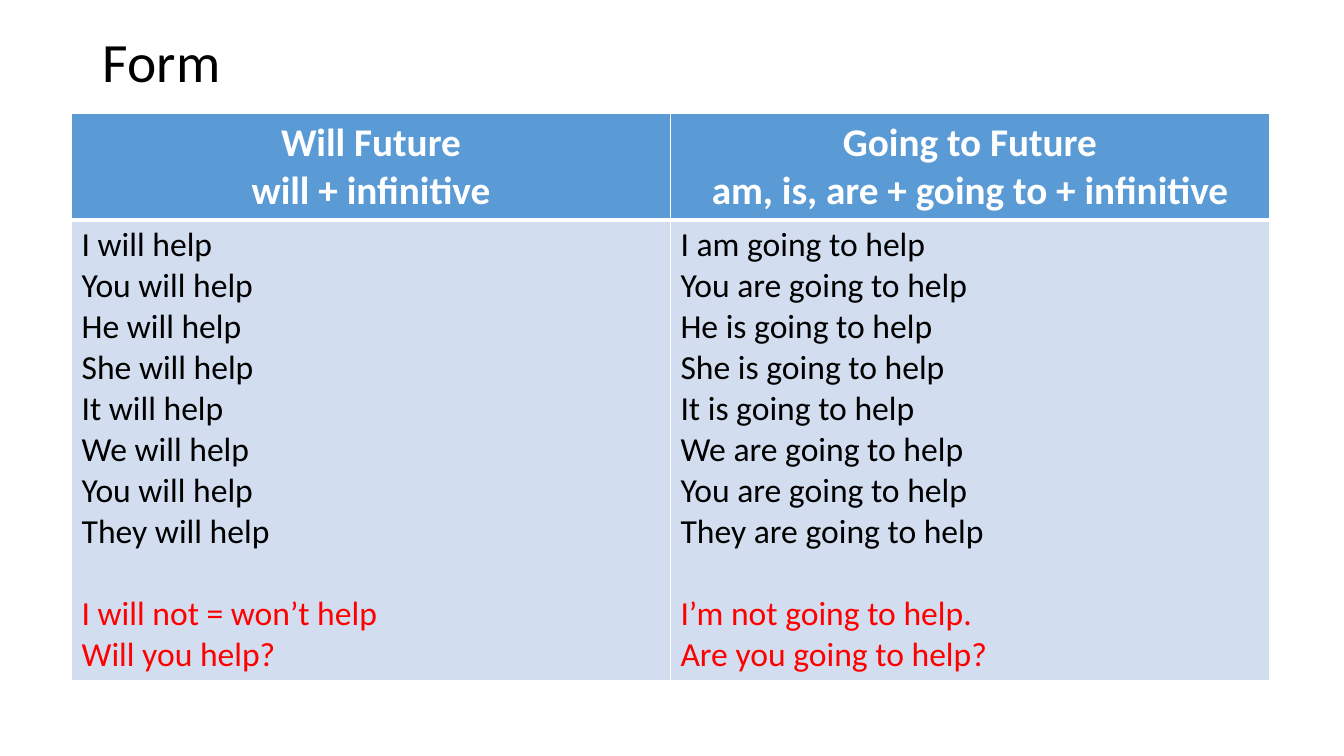
import dataclasses

import pptx
import pptx.dml.color
import pptx.enum.text
import pptx.oxml.ns
import pptx.util
from lxml import etree

Inches = pptx.util.Inches
Pt = pptx.util.Pt
Align = pptx.enum.text.PP_ALIGN
Anchor = pptx.enum.text.MSO_ANCHOR


@dataclasses.dataclass(frozen=True)
class Theme:
    font: str = "Calibri"
    black: str = "000000"
    white: str = "FFFFFF"
    red: str = "FF0000"
    header_fill: str = "5B9BD5"
    body_fill: str = "D2DEEF"
    title_size: float = 39.6
    header_size: float = 28
    body_size: float = 24
    example_gap: float = 29.3
    thin_line: float = 1
    thick_line: float = 3


THEME = Theme()

HEADERS = [
    ["Will Future", "will + infinitive"],
    ["Going to Future", "am, is, are + going to + infinitive"],
]
WILL_FORMS = [f"{person} will help" for person in
              ("I", "You", "He", "She", "It", "We", "You", "They")]
GOING_TO_FORMS = [f"{subject} going to help" for subject in
                  ("I am", "You are", "He is", "She is", "It is",
                   "We are", "You are", "They are")]
FORMS = [WILL_FORMS, GOING_TO_FORMS]
EXAMPLES = [
    ["I will not = won’t help", "Will you help?"],
    ["I’m not going to help.", "Are you going to help?"],
]


def add_text(text_frame, text, *, size, color, bold=False, align=Align.LEFT,
             space_before=0, line_spacing=1.0):
    """Fill the empty first paragraph, or append a new one."""
    paragraph = text_frame.paragraphs[-1]
    if paragraph.runs:
        paragraph = text_frame.add_paragraph()
    paragraph.alignment = align
    paragraph.space_before = Pt(space_before)
    paragraph.line_spacing = line_spacing
    run = paragraph.add_run()
    run.text = text
    run.font.name = THEME.font
    run.font.size = Pt(size)
    run.font.bold = bold
    run.font.color.rgb = pptx.dml.color.RGBColor.from_string(color)


def style_cell(cell, fill, **line_widths):
    """Draw white borders, then fill the cell."""
    properties = cell._tc.get_or_add_tcPr()
    for side in ("L", "R", "T", "B"):
        width = line_widths.get(side, THEME.thin_line)
        line = etree.SubElement(properties, pptx.oxml.ns.qn(f"a:ln{side}"),
                                w=str(Pt(width)))
        solid = etree.SubElement(line, pptx.oxml.ns.qn("a:solidFill"))
        etree.SubElement(solid, pptx.oxml.ns.qn("a:srgbClr"), val=THEME.white)
    cell.fill.solid()
    cell.fill.fore_color.rgb = pptx.dml.color.RGBColor.from_string(fill)


def place_title(slide, text, left, top, width, height):
    title = slide.shapes.title
    title.left, title.top = Inches(left), Inches(top)
    title.width, title.height = Inches(width), Inches(height)
    title.text_frame.auto_size = pptx.enum.text.MSO_AUTO_SIZE.NONE
    title.text_frame.vertical_anchor = Anchor.MIDDLE
    add_text(title.text_frame, text, size=THEME.title_size, color=THEME.black,
             line_spacing=0.9)


def add_form_table(slide, left, top, width, height, header_height):
    table = slide.shapes.add_table(2, len(HEADERS), Inches(left), Inches(top),
                                   Inches(width), Inches(height)).table
    table.rows[0].height = Inches(header_height)
    table.rows[1].height = Inches(height - header_height)

    for column, (header, forms, examples) in enumerate(
            zip(HEADERS, FORMS, EXAMPLES)):
        # Header cell
        cell = table.cell(0, column)
        style_cell(cell, THEME.header_fill, B=THEME.thick_line)
        for line in header:
            add_text(cell.text_frame, line, size=THEME.header_size,
                     color=THEME.white, bold=True, align=Align.CENTER)

        # Conjugation, then negative and question in red
        cell = table.cell(1, column)
        style_cell(cell, THEME.body_fill, T=THEME.thick_line)
        for line in forms:
            add_text(cell.text_frame, line, size=THEME.body_size,
                     color=THEME.black)
        for index, line in enumerate(examples):
            add_text(cell.text_frame, line, size=THEME.body_size,
                     color=THEME.red,
                     space_before=0 if index else THEME.example_gap)


def build_form_slide(presentation):
    slide = presentation.slides.add_slide(presentation.slide_layouts[5])
    place_title(slide, "Form", 0.92, 0.28, 11.5, 0.72)
    add_form_table(slide, 0.71, 1.13, 11.88, 5.53, header_height=1.04)


def main():
    presentation = pptx.Presentation()
    presentation.slide_width = Inches(13.33)
    presentation.slide_height = Inches(7.5)
    build_form_slide(presentation)
    presentation.save("out.pptx")


if __name__ == "__main__":
    main()
